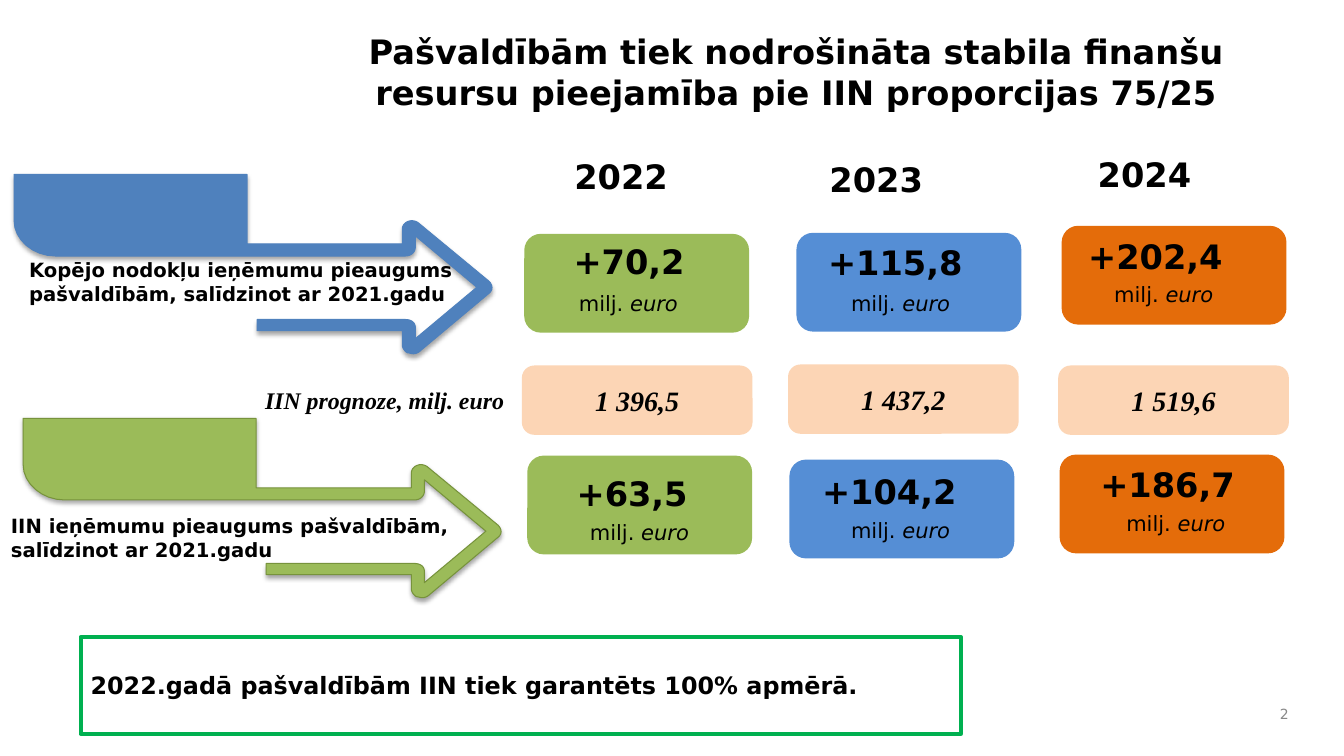
from pptx import Presentation
from pptx.util import Inches, Pt
from pptx.dml.color import RGBColor as Rgb
from pptx.enum.shapes import MSO_SHAPE as Kind
from pptx.enum.text import PP_ALIGN as Align, MSO_ANCHOR as Anchor
from pptx.oxml import parse_xml
from pptx.oxml.ns import nsdecls

SANS, SERIF = "DejaVu Sans", "Times New Roman"
GREEN, BLUE, ORANGE, PEACH = "9BBB59", "558ED5", "E46C0A", "FCD5B5"

# Arrow outline: pairs are corners, six numbers are a Bezier curve
ARROW = [
    (4.85, 2.79), (4.16, 2.22), (4.13, 2.19, 4.08, 2.18, 4.04, 2.2),
    (4, 2.22, 3.99, 2.25, 3.99, 2.28), (3.99, 2.42), (2.45, 2.42),
    (2.45, 1.73), (0.14, 1.73), (0.14, 2.19),
    (0.14, 2.38, 0.33, 2.54, 0.55, 2.54), (4.02, 2.54),
    (4.08, 2.54, 4.12, 2.5, 4.12, 2.45), (4.12, 2.34), (4.73, 2.85),
    (4.12, 3.36), (4.12, 3.25), (4.12, 3.2, 4.08, 3.17, 4.02, 3.17),
    (2.55, 3.17), (2.55, 3.28), (3.99, 3.28), (3.99, 3.42),
    (3.99, 3.45, 4.01, 3.48, 4.04, 3.5), (4.06, 3.5, 4.08, 3.51, 4.1, 3.51),
    (4.12, 3.51, 4.15, 3.5, 4.17, 3.48), (4.85, 2.91),
    (4.89, 2.88, 4.89, 2.83, 4.85, 2.79),
]

# Per year: label, fill, then (left, top) of each part and its value
YEARS = [
    dict(year="2022", fill=GREEN, head=(5.4, 1.5), mid=(5.19, 3.64, "1 396,5"),
         gains=[((5.2, 2.32), (5.41, 2.34, "+70,2"), (5.62, 2.83)),
                ((5.23, 4.52), (5.44, 4.64, "+63,5"), (5.73, 5.1))]),
    dict(year="2023", fill=BLUE, head=(7.93, 1.53), mid=(7.83, 3.63, "1 437,2"),
         gains=[((7.9, 2.31), (8.05, 2.35, "+115,8"), (8.32, 2.83)),
                ((7.83, 4.56), (7.99, 4.62, "+104,2"), (8.32, 5.08))]),
    dict(year="2024", fill=ORANGE, head=(10.59, 1.48), mid=(10.51, 3.64, "1 519,6"),
         gains=[((10.53, 2.24), (10.63, 2.29, "+202,4"), (10.93, 2.74)),
                ((10.51, 4.51), (10.75, 4.55, "+186,7"), (11.05, 5.02))]),
]


def color(code):
    return Rgb.from_string(code)


def paint(shape, fill=None, line=None, width=1):
    shape.shadow.inherit = False
    if fill:
        shape.fill.solid()
        shape.fill.fore_color.rgb = color(fill)
    else:
        shape.fill.background()
    if line:
        shape.line.color.rgb = color(line)
        shape.line.width = Pt(width)
    else:
        shape.line.fill.background()


def write(shape, text, size=24, font=SANS, ink="000000", bold=True,
          italic=False, align=Align.CENTER, anchor=Anchor.TOP, wrap=True, tail=""):
    """Fill a shape with one paragraph; tail is an italic ending."""
    frame = shape.text_frame
    frame.word_wrap = wrap
    frame.vertical_anchor = anchor
    par = frame.paragraphs[0]
    par.alignment = align
    for part, slant in ((text, italic), (tail, True)):
        if part:
            run = par.add_run()
            run.text = part
            run.font.name = font
            run.font.size = Pt(size)
            run.font.bold = bold
            run.font.italic = slant
            run.font.color.rgb = color(ink)


def label(slide, box, text, **form):
    write(slide.shapes.add_textbox(*map(Inches, box)), text, **form)


def block(slide, box, kind=Kind.ROUNDED_RECTANGLE, **style):
    shape = slide.shapes.add_shape(kind, *map(Inches, box))
    paint(shape, **style)
    return shape


def trace(parts, steps=8):
    """Turn corners and curves into a plain list of points."""
    points = []
    for part in parts:
        if len(part) == 2:
            points.append(part)
            continue
        ctrl = [points[-1], part[:2], part[2:4], part[4:]]
        for step in range(1, steps + 1):
            t = step / steps
            s = 1 - t
            mix = (s ** 3, 3 * s * s * t, 3 * s * t * t, t ** 3)
            points.append(tuple(sum(m * c[i] for m, c in zip(mix, ctrl))
                                for i in (0, 1)))
    return points


def arrow(slide, dx, dy, fill, line):
    points = [(Inches(x + dx), Inches(y + dy)) for x, y in trace(ARROW)]
    pen = slide.shapes.build_freeform(*points[0], scale=1.0)
    pen.add_line_segments(points[1:], close=True)
    shape = pen.convert_to_shape()
    paint(shape, fill, line, 0.75)
    # Soft shadow straight below
    glow = shape._element.spPr.find(
        "{http://schemas.openxmlformats.org/drawingml/2006/main}effectLst")
    glow.append(parse_xml(
        f'<a:outerShdw {nsdecls("a")} blurRad="{Pt(3.1)}" dist="{Pt(1.8)}" '
        'dir="5400000" rotWithShape="0"><a:srgbClr val="000000">'
        '<a:alpha val="35000"/></a:srgbClr></a:outerShdw>'))


def column(slide, data):
    label(slide, (*data["head"], 1.52, 0.5), data["year"])
    for card, (x, y, value), unit in data["gains"]:
        block(slide, (*card, 2.23, 0.98), fill=data["fill"])
        label(slide, (x, y, 1.66, 0.5), value)
        label(slide, (*unit, 1.29, 0.35), "milj. ", size=15, bold=False,
              wrap=False, tail="euro ")
    x, y, value = data["mid"]
    cell = block(slide, (x, y, 2.26, 0.66), fill=PEACH, line=PEACH, width=2)
    write(cell, value, size=20, font=SERIF, italic=True, anchor=Anchor.MIDDLE)


def main():
    deck = Presentation()
    deck.slide_width, deck.slide_height = Inches(13.33), Inches(7.5)
    slide = deck.slides.add_slide(deck.slide_layouts[6])

    # Title and page number
    label(slide, (3.45, 0.26, 8.89, 1.13),
          "Pašvaldībām tiek nodrošināta stabila finanšu resursu "
          "pieejamība pie IIN proporcijas 75/25")
    label(slide, (12.27, 6.92, 0.61, 0.33), "2", size=10, ink="898989",
          bold=False, align=Align.RIGHT, anchor=Anchor.MIDDLE)

    # Arrows with their captions
    arrow(slide, 0, 0, "4F81BD", "4F81BD")
    arrow(slide, 0.09, 2.42, GREEN, "77933C")
    label(slide, (0.19, 2.51, 4.49, 0.57),
          "Kopējo nodokļu ieņēmumu pieaugums pašvaldībām, "
          "salīdzinot ar 2021.gadu", size=14, align=Align.LEFT)
    label(slide, (0.01, 5.05, 4.69, 0.57),
          "IIN ieņēmumu pieaugums pašvaldībām, salīdzinot ar 2021.gadu",
          size=14, align=Align.LEFT)
    label(slide, (2.53, 3.78, 2.82, 0.39), "IIN prognoze, milj. euro",
          size=17, font=SERIF, italic=True, align=Align.LEFT)

    # Year columns
    for data in YEARS:
        column(slide, data)

    # Framed note
    note = block(slide, (0.8, 6.32, 8.73, 0.96), Kind.RECTANGLE,
                 line="00B050", width=3)
    write(note, "2022.gadā pašvaldībām IIN tiek garantēts 100% apmērā.",
          size=17, align=Align.LEFT, anchor=Anchor.MIDDLE)

    deck.save("out.pptx")


if __name__ == "__main__":
    main()
